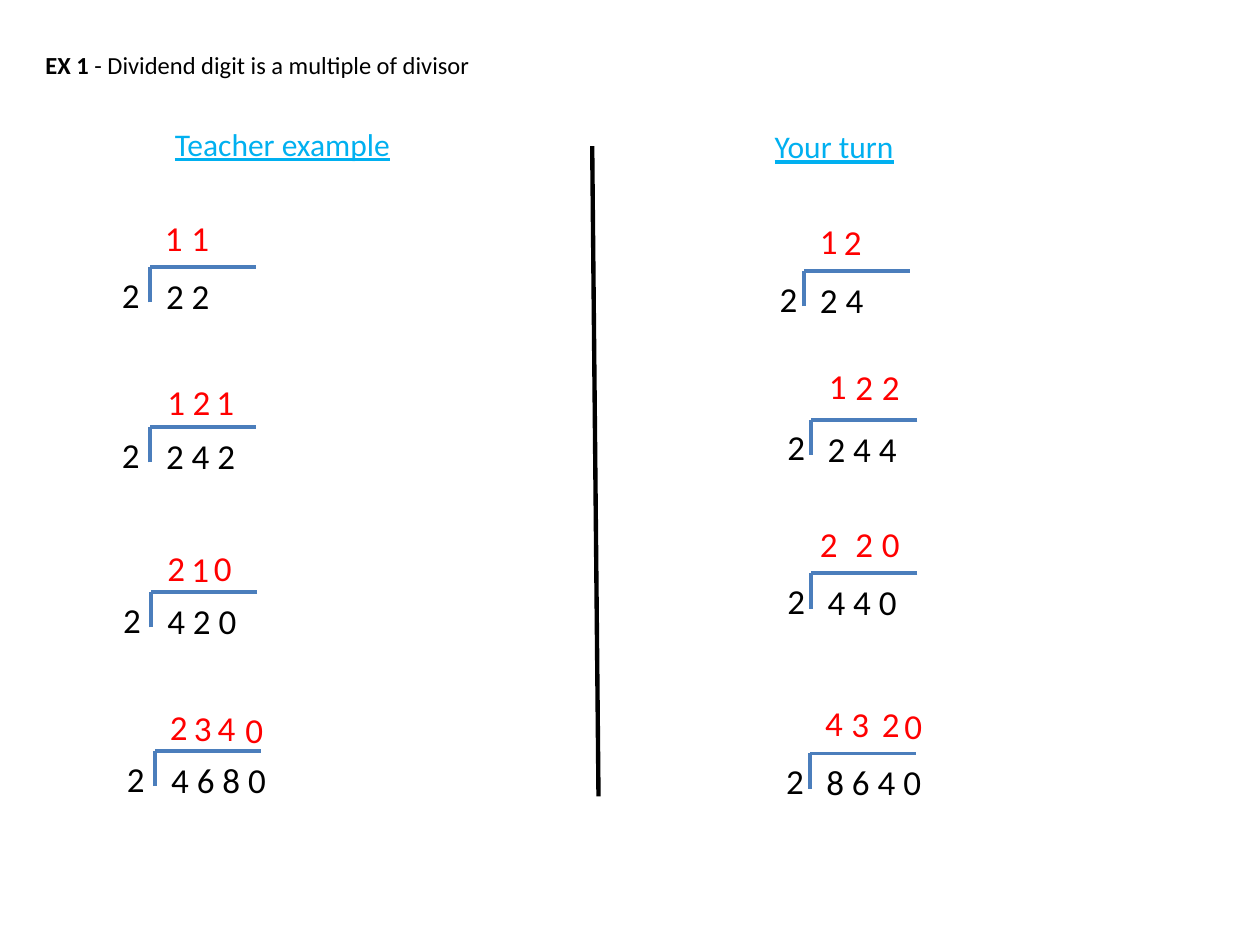
from pptx import Presentation
from pptx.dml.color import RGBColor
from pptx.enum import shapes, text
from pptx.oxml.ns import qn
from pptx.util import Inches, Pt

COLORS = {"text": "000000", "heading": "00B0F0", "answer": "FF0000",
          "bracket": "4B7EBC", "divider": "000000"}
FONT = "Calibri"

# dividend, left and top of the bracket, then (digit, dx, dy) of the answer
TEACHER = [
    ("2 2", 1.19, 2.12, [("1", 0.02, -0.45), ("1", 0.23, -0.45)]),
    ("2 4 2", 1.19, 3.39, [("1", 0.04, -0.42), ("2", 0.24, -0.42), ("1", 0.43, -0.42)]),
    ("4 2 0", 1.2, 4.7, [("2", 0.03, -0.41), ("1", 0.22, -0.4), ("0", 0.4, -0.41)]),
    ("4 6 8 0", 1.23, 5.96, [("2", 0.02, -0.41), ("3", 0.21, -0.4),
                             ("4", 0.4, -0.4), ("0", 0.62, -0.39)]),
]
YOUR_TURN = [
    ("2 4", 6.38, 2.15, [("1", 0.03, -0.46), ("2", 0.22, -0.45)]),
    ("2 4 4", 6.44, 3.33, [("1", 0.04, -0.49), ("2", 0.25, -0.48), ("2", 0.46, -0.48)]),
    ("4 4 0", 6.44, 4.55, [("2", -0.03, -0.45), ("2", 0.25, -0.45), ("0", 0.46, -0.45)]),
    ("8 6 4 0", 6.43, 5.98, [("4", 0.02, -0.46), ("3", 0.23, -0.45),
                             ("2", 0.47, -0.45), ("0", 0.65, -0.44)]),
]


def style(font, size, color):
    font.name = FONT
    font.size = Pt(size)
    font.color.rgb = RGBColor.from_string(COLORS[color])


def add_text(parent, words, box, size, color, wrap=False):
    sp = parent.add_textbox(*map(Inches, box))
    tf = sp.text_frame
    tf.word_wrap = wrap
    tf.auto_size = text.MSO_AUTO_SIZE.SHAPE_TO_FIT_TEXT
    p = tf.paragraphs[0]
    p.text = words
    style(p.font, size, color)
    return p


def add_line(parent, start, end, color, width):
    line = parent.add_connector(shapes.MSO_CONNECTOR.STRAIGHT,
                                *map(Inches, (*start, *end)))
    line.line.color.rgb = RGBColor.from_string(COLORS[color])
    line.line.width = Pt(width)
    sp_pr = line._element.spPr
    sp_pr.append(sp_pr.makeelement(qn("a:effectLst"), {}))


def add_title(s, box):
    sp = s.shapes.title
    sp.left, sp.top, sp.width, sp.height = map(Inches, box)
    tf = sp.text_frame
    tf.word_wrap = False
    tf.auto_size = text.MSO_AUTO_SIZE.SHAPE_TO_FIT_TEXT
    tf.vertical_anchor = text.MSO_ANCHOR.TOP
    p = tf.paragraphs[0]
    p.alignment = text.PP_ALIGN.LEFT
    style(p.font, 14, "text")
    for words, bold in (("EX 1 ", True), ("- Dividend digit is a multiple of divisor", False)):
        r = p.add_run()
        r.text = words
        r.font.bold = bold


def add_division(s, dividend, x, y, answer, divisor_dx):
    # Bracket, dividend and divisor
    group = s.shapes.add_group_shape().shapes
    add_line(group, (x, y + 0.28), (x, y), "bracket", 2.25)
    add_line(group, (x + 0.84, y), (x, y), "bracket", 2.25)
    width = 0.24 + 0.103 * len(dividend)
    add_text(group, dividend, (x + 0.03, y + 0.01, width, 0.44), 20, "text")
    add_text(group, "2", (x + divisor_dx, y, 0.34, 0.44), 20, "text")
    # Answer digits above the bracket
    for digit, dx, dy in answer:
        add_text(s.shapes, digit, (x + dx, y + dy, 0.34, 0.44), 20, "answer")


def add_column(s, heading, box, divisions, divisor_dx):
    p = add_text(s.shapes, heading, box, 18, "heading", wrap=True)
    p.font.underline = True
    for division in divisions:
        add_division(s, *division, divisor_dx)


def main():
    prs = Presentation()
    prs.slide_width, prs.slide_height = Inches(10), Inches(7.5)
    s = prs.slides.add_slide(prs.slide_layouts[5])

    add_title(s, (0.26, 0.35, 3.59, 0.34))
    add_column(s, "Teacher example", (1.29, 0.94, 2.11, 0.4), TEACHER, -0.32)
    add_line(s.shapes, (4.7, 1.16), (4.75, 6.32), "divider", 2.5)
    add_column(s, "Your turn", (6.05, 0.96, 2.11, 0.4), YOUR_TURN, -0.29)

    prs.save("out.pptx")


if __name__ == "__main__":
    main()
